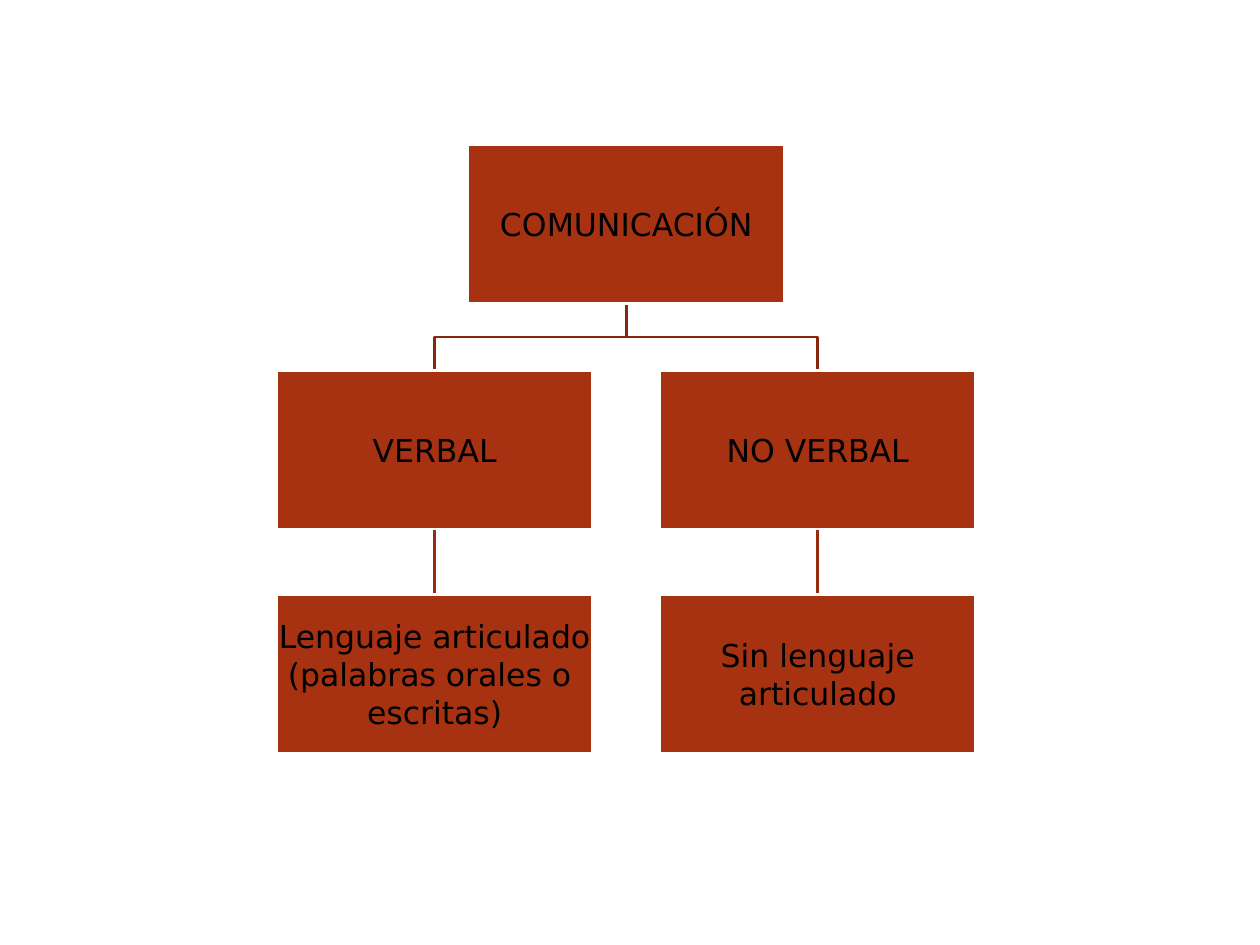
from dataclasses import dataclass

from lxml.etree import SubElement
from pptx import Presentation
from pptx.dml.color import RGBColor as Rgb
from pptx.enum.shapes import MSO_CONNECTOR as Wire, MSO_SHAPE as Kind
from pptx.enum.text import MSO_ANCHOR as Anchor, PP_ALIGN as Align
from pptx.oxml.ns import qn
from pptx.shapes.autoshape import Shape
from pptx.slide import Slide
from pptx.util import Inches, Pt

HUES = {"box": "A63212", "edge": "FFFFFF", "text": "000000",
        "fork": "85280E", "drop": "972D10"}
WIDE, HIGH = 2.51, 1.26
MID, SPAN = 4.97, 1.52
TOPS = (1.15, 2.94, 4.72)
PAD = Inches(0.01)
FRAME = {"word_wrap": True, "vertical_anchor": Anchor.MIDDLE,
         "margin_left": PAD, "margin_right": PAD,
         "margin_top": PAD, "margin_bottom": PAD}
FONT = {"name": "DejaVu Sans", "size": Pt(18)}


@dataclass
class Node:
    text: str
    side: int
    row: int


ROOT = Node("COMUNICACIÓN", 0, 0)
PAIRS = [
    (Node("VERBAL", -1, 1),
     Node("Lenguaje articulado\n(palabras orales o \nescritas)", -1, 2)),
    (Node("NO VERBAL", 1, 1), Node("Sin lenguaje articulado", 1, 2)),
]


def hue(key: str) -> Rgb:
    return Rgb.from_string(HUES[key])


def apply(item: object, form: dict) -> None:
    for key, val in form.items():
        setattr(item, key, val)


def ink(line, key: str) -> None:
    line.color.rgb = hue(key)
    line.width = Pt(1.5)


def add_box(slide: Slide, node: Node) -> Shape:
    left = MID + node.side * SPAN - WIDE / 2
    box = slide.shapes.add_shape(Kind.RECTANGLE, Inches(left), Inches(TOPS[node.row]),
                                 Inches(WIDE), Inches(HIGH))
    box.shadow.inherit = False
    box.fill.solid()
    box.fill.fore_color.rgb = hue("box")
    ink(box.line, "edge")
    frame = box.text_frame
    apply(frame, FRAME)
    frame.text = node.text
    for para in frame.paragraphs:
        para.alignment = Align.CENTER
        apply(para.font, FONT)
        para.font.color.rgb = hue("text")
    return box


def add_fork(slide: Slide, side: int) -> None:
    top, end = TOPS[0] + HIGH, TOPS[1]
    bend, far = (top + end) / 2, MID + side * SPAN
    pen = slide.shapes.build_freeform(Inches(MID), Inches(top))
    spots = [(MID, bend), (far, bend), (far, end)]
    pen.add_line_segments([(Inches(x), Inches(y)) for x, y in spots], close=False)
    fork = pen.convert_to_shape()
    fork.shadow.inherit = False
    fork.fill.background()
    ink(fork.line, "fork")


def add_drop(slide: Slide, head: Shape, leaf: Shape) -> None:
    drop = slide.shapes.add_connector(Wire.STRAIGHT, 0, 0, 0, 0)
    drop.begin_connect(head, 2)
    drop.end_connect(leaf, 0)
    ink(drop.line, "drop")
    SubElement(drop.element.spPr, qn("a:effectLst"))
    head.element.addprevious(drop.element)


def main() -> None:
    deck = Presentation()
    deck.slide_width, deck.slide_height = Inches(10), Inches(7.5)
    slide = deck.slides.add_slide(deck.slide_layouts[6])
    for head, _ in PAIRS:
        add_fork(slide, head.side)
    add_box(slide, ROOT)
    for head, leaf in PAIRS:
        add_drop(slide, add_box(slide, head), add_box(slide, leaf))
    deck.save("out.pptx")


if __name__ == "__main__":
    main()
